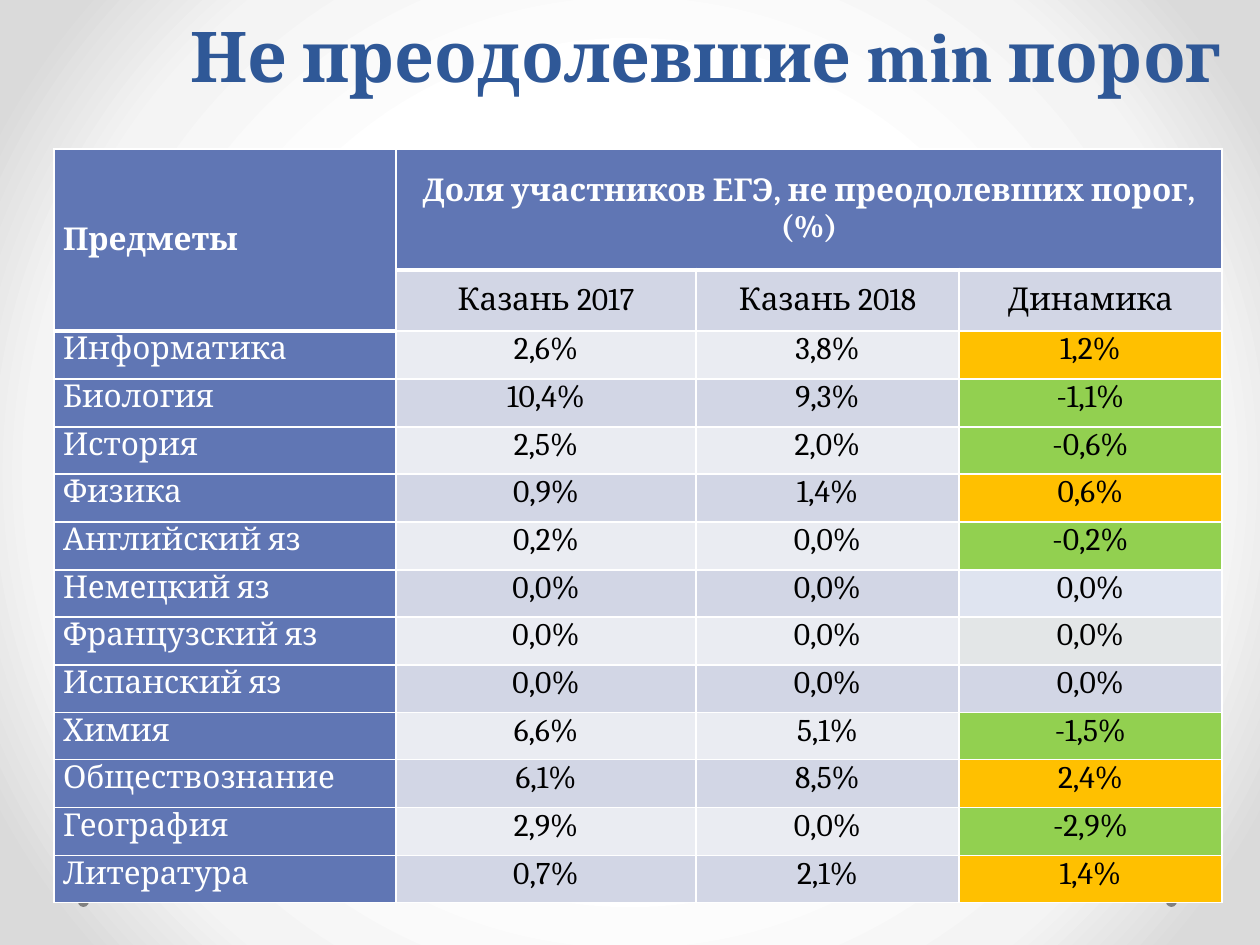
from dataclasses import dataclass

from pptx import Presentation
from pptx import util as u
from pptx.dml.color import RGBColor
from pptx.enum import shapes, text
from pptx.oxml import parse_xml
from pptx.oxml.ns import nsdecls

EMU_PER_PX = 914400 / 126


@dataclass(frozen=True)
class Theme:
    font: str = "Cambria"
    title_size: int = 40
    table_size: int = 18
    title: str = "2F5897"
    header: str = "6076B4"
    band_dark: str = "D2D6E5"
    band_light: str = "EAECF2"
    growth: str = "FFC000"
    decline: str = "92D050"
    white: str = "FFFFFF"
    black: str = "000000"
    dot: str = "808080"
    background: tuple = ((50, "FFFFFF"), (76, "F4F4F4"), (92, "DADADA"))


THEME = Theme()
COLUMN_WIDTHS = [342, 300, 263, 263]
ROW_HEIGHTS = [121, 61] + [48, 48, 47] * 4
YEARS = ["Казань 2017", "Казань 2018", "Динамика"]
RESULTS = [
    ("Информатика", "2,6%", "3,8%", "1,2%"),
    ("Биология", "10,4%", "9,3%", "-1,1%"),
    ("История", "2,5%", "2,0%", "-0,6%"),
    ("Физика", "0,9%", "1,4%", "0,6%"),
    ("Английский яз", "0,2%", "0,0%", "-0,2%"),
    ("Немецкий яз", "0,0%", "0,0%", "0,0%"),
    ("Французский яз", "0,0%", "0,0%", "0,0%"),
    ("Испанский яз", "0,0%", "0,0%", "0,0%"),
    ("Химия", "6,6%", "5,1%", "-1,5%"),
    ("Обществознание", "6,1%", "8,5%", "2,4%"),
    ("География", "2,9%", "0,0%", "-2,9%"),
    ("Литература", "0,7%", "2,1%", "1,4%"),
]
UNCHANGED_FILLS = {"Немецкий яз": "DFE4F0", "Французский яз": "E3E6E7"}


def px(length):
    return u.Emu(round(length * EMU_PER_PX))


def set_background(slide):
    stops = "".join(
        f'<a:gs pos="{position * 1000}"><a:srgbClr val="{color}"/></a:gs>'
        for position, color in THEME.background
    )
    background = parse_xml(
        f'<p:bg {nsdecls("p", "a")}><p:bgPr><a:gradFill rotWithShape="1">'
        f'<a:gsLst>{stops}</a:gsLst><a:path path="circle">'
        '<a:fillToRect l="50000" t="50000" r="50000" b="50000"/></a:path>'
        "</a:gradFill><a:effectLst/></p:bgPr></p:bg>"
    )
    slide.element.cSld.insert(0, background)


def add_dot(slide, left, top):
    dot = slide.shapes.add_shape(
        shapes.MSO_SHAPE.OVAL, px(left), px(top), px(11), px(11)
    )
    dot.shadow.inherit = False
    dot.fill.solid()
    dot.fill.fore_color.rgb = RGBColor.from_string(THEME.dot)
    dot.line.fill.background()


def write(frame, words, size, color, bold=False, align=text.PP_ALIGN.CENTER):
    paragraph = frame.paragraphs[0]
    paragraph.alignment = align
    run = paragraph.add_run()
    run.text = words
    run.font.name = THEME.font
    run.font.size = u.Pt(size)
    run.font.bold = bold
    run.font.color.rgb = RGBColor.from_string(color)


def add_title(slide, words):
    box = slide.shapes.add_textbox(px(171), px(14), px(1070), px(82))
    frame = box.text_frame
    frame.word_wrap = True
    frame.margin_left = frame.margin_right = 0
    frame.margin_top = frame.margin_bottom = 0
    frame.vertical_anchor = text.MSO_ANCHOR.MIDDLE
    write(frame, words, THEME.title_size, THEME.title, bold=True)


def set_borders(cell, top, bottom):
    """Draw white cell edges; top and bottom are widths in points."""
    properties = cell._tc.get_or_add_tcPr()
    edges = (("L", 1), ("R", 1), ("T", top), ("B", bottom))
    for index, (edge, width) in enumerate(edges):
        line = parse_xml(
            f'<a:ln{edge} {nsdecls("a")} w="{u.Pt(width)}"><a:solidFill>'
            f'<a:srgbClr val="{THEME.white}"/></a:solidFill></a:ln{edge}>'
        )
        properties.insert(index, line)


def style_cell(cell, fill, anchor):
    cell.fill.solid()
    cell.fill.fore_color.rgb = RGBColor.from_string(fill)
    cell.vertical_anchor = anchor
    cell.margin_left = cell.margin_right = px(9)
    cell.margin_top = cell.margin_bottom = 0


def fill_cell(cell, words, fill, color=THEME.black, bold=False,
              align=text.PP_ALIGN.CENTER, anchor=text.MSO_ANCHOR.TOP):
    style_cell(cell, fill, anchor)
    write(cell.text_frame, words, THEME.table_size, color, bold, align)


def change_fill(subject, change, band):
    if change == "0,0%":
        return UNCHANGED_FILLS.get(subject, band)
    return THEME.decline if change.startswith("-") else THEME.growth


def fill_header(table):
    middle = text.MSO_ANCHOR.MIDDLE
    table.cell(0, 0).merge(table.cell(1, 0))
    table.cell(0, 1).merge(table.cell(0, 3))
    fill_cell(table.cell(0, 0), "Предметы", THEME.header, THEME.white, True,
              text.PP_ALIGN.JUSTIFY, middle)
    fill_cell(table.cell(0, 1), "Доля участников ЕГЭ, не преодолевших порог, (%)",
              THEME.header, THEME.white, True, anchor=middle)
    for column, year in enumerate(YEARS, start=1):
        fill_cell(table.cell(1, column), year, THEME.band_dark, anchor=middle)


def fill_results(table):
    for row, (subject, *shares, change) in enumerate(RESULTS, start=2):
        band = THEME.band_dark if row % 2 else THEME.band_light
        fill_cell(table.cell(row, 0), subject, THEME.header, THEME.white,
                  align=text.PP_ALIGN.LEFT)
        for column, share in enumerate(shares, start=1):
            fill_cell(table.cell(row, column), share, band)
        fill_cell(table.cell(row, 3), change, change_fill(subject, change, band))


def add_results_table(slide):
    frame = slide.shapes.add_table(
        len(ROW_HEIGHTS), len(COLUMN_WIDTHS), px(54), px(149),
        px(sum(COLUMN_WIDTHS)), px(sum(ROW_HEIGHTS)),
    )
    table = frame.table
    table.first_row = table.horz_banding = False
    for column, width in zip(table.columns, COLUMN_WIDTHS):
        column.width = px(width)
    for row, height in zip(table.rows, ROW_HEIGHTS):
        row.height = px(height)
    fill_header(table)
    fill_results(table)
    for row in range(len(ROW_HEIGHTS)):
        for column in range(len(COLUMN_WIDTHS)):
            header_rows = 1 if column else 2
            set_borders(table.cell(row, column),
                        top=3 if row == header_rows else 1,
                        bottom=3 if row < header_rows else 1)


def main():
    presentation = Presentation()
    presentation.slide_width = px(1260)
    presentation.slide_height = px(945)
    slide = presentation.slides.add_slide(presentation.slide_layouts[6])
    set_background(slide)
    for left in (1166, 78):
        add_dot(slide, left, 896)
    add_title(slide, "Не преодолевшие min порог")
    add_results_table(slide)
    presentation.save("out.pptx")


if __name__ == "__main__":
    main()
